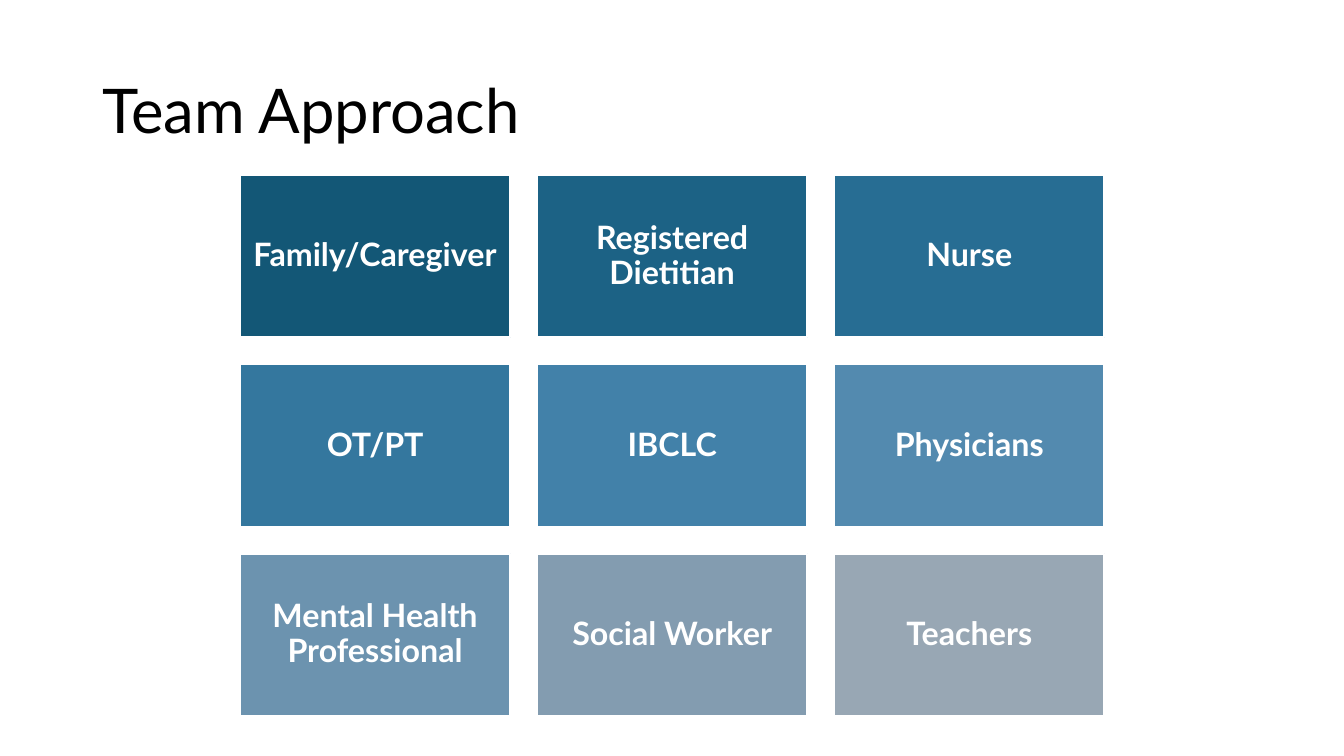
from pptx import Presentation
from pptx.dml.color import RGBColor
from pptx.enum.shapes import MSO_SHAPE
from pptx.enum.text import MSO_ANCHOR, PP_ALIGN
from pptx.util import Pt

TITLE = "Team Approach"
TEAM = [
    ("Family/Caregiver", "135776"),
    ("Registered Dietitian", "1C6285"),
    ("Nurse", "276D93"),
    ("OT/PT", "34779E"),
    ("IBCLC", "4281A9"),
    ("Physicians", "538AAF"),
    ("Mental Health Professional", "6C93AF"),
    ("Social Worker", "839CB0"),
    ("Teachers", "98A7B4"),
]
FONT = "Lato"
COLUMNS = 3
GRID_LEFT, GRID_TOP = 171.5, 125.1
CARD_WIDTH, CARD_HEIGHT = 193, 116
GAP = 19.2


def color(hex_string):
    return RGBColor.from_string(hex_string)


def write(shape, text, size, hex_string, bold=False, alignment=PP_ALIGN.LEFT):
    frame = shape.text_frame
    frame.word_wrap = True
    frame.vertical_anchor = MSO_ANCHOR.MIDDLE
    frame.text = text
    paragraph = frame.paragraphs[0]
    paragraph.alignment = alignment
    paragraph.line_spacing = 0.9
    paragraph.font.name = FONT
    paragraph.font.size = Pt(size)
    paragraph.font.bold = bold
    paragraph.font.color.rgb = color(hex_string)
    return frame


def add_card(slide, index, name, fill):
    row, column = divmod(index, COLUMNS)
    card = slide.shapes.add_shape(
        MSO_SHAPE.RECTANGLE,
        Pt(GRID_LEFT + column * (CARD_WIDTH + GAP)),
        Pt(GRID_TOP + row * (CARD_HEIGHT + GAP)),
        Pt(CARD_WIDTH),
        Pt(CARD_HEIGHT),
    )
    card.shadow.inherit = False
    card.fill.solid()
    card.fill.fore_color.rgb = color(fill)
    card.line.color.rgb = color("FFFFFF")
    card.line.width = Pt(1.5)
    frame = write(card, name, 23, "FFFFFF", True, PP_ALIGN.CENTER)
    frame.margin_left = frame.margin_right = Pt(7.2)
    frame.margin_top = frame.margin_bottom = Pt(7.2)


def main():
    presentation = Presentation()
    presentation.slide_width, presentation.slide_height = Pt(960), Pt(540)
    slide = presentation.slides.add_slide(presentation.slide_layouts[6])
    title = slide.shapes.add_textbox(Pt(66), Pt(28.8), Pt(828), Pt(104.4))
    write(title, TITLE, 44, "000000")
    for index, (name, fill) in enumerate(TEAM):
        add_card(slide, index, name, fill)
    presentation.save("out.pptx")


if __name__ == "__main__":
    main()
